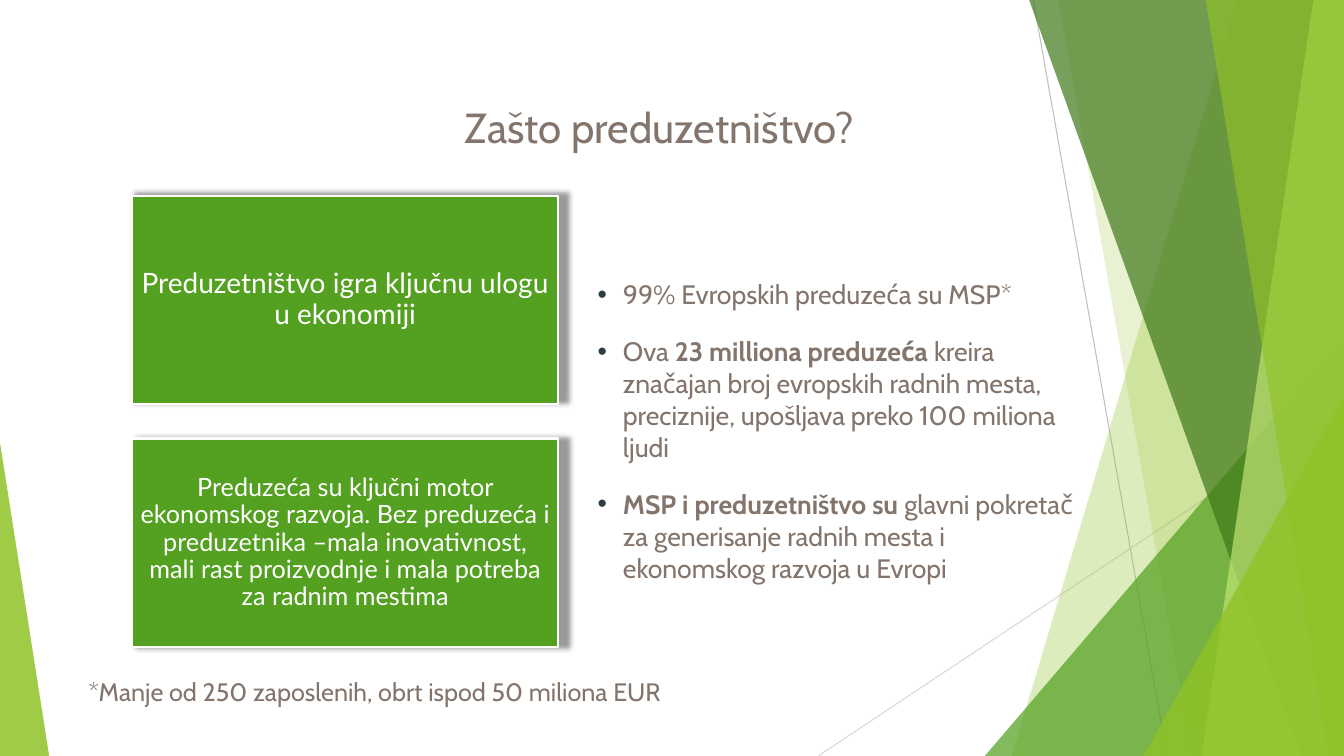
"""Build the slide on why enterprise matters."""
from dataclasses import dataclass
from typing import Any, NamedTuple

from lxml.etree import SubElement
from pptx import Presentation
from pptx.dml.color import RGBColor
from pptx.enum.shapes import MSO_CONNECTOR, MSO_SHAPE
from pptx.enum.text import MSO_ANCHOR, PP_ALIGN
from pptx.oxml.ns import qn
from pptx.util import Cm, Pt

WHITE = RGBColor(0xFF, 0xFF, 0xFF)
BLACK = RGBColor(0x00, 0x00, 0x00)
LIME = RGBColor(0x90, 0xC2, 0x26)
GREEN = RGBColor(0x54, 0xA0, 0x21)
FOREST = RGBColor(0x3F, 0x78, 0x19)
PALE = RGBColor(0xC0, 0xE4, 0x74)
BROWN = RGBColor(0x84, 0x75, 0x6C)
SLATE = RGBColor(0x2C, 0x3C, 0x43)
GREY = RGBColor(0xBF, 0xBF, 0xBF)
MIST = RGBColor(0xD9, 0xD9, 0xD9)

WIDE, HIGH = 33.87, 19.05
BLEED = -0.02


class Box(NamedTuple):
    left: float
    top: float
    width: float
    height: float


@dataclass
class Ray:
    start: tuple[float, float]
    end: tuple[float, float]
    color: RGBColor


@dataclass
class Shard:
    """A panel that reaches the right edge, set by the ends of its left side."""
    top: float
    foot: float
    color: RGBColor
    alpha: int


@dataclass
class Wedge:
    box: Box
    apex: float
    color: RGBColor
    alpha: int


@dataclass
class Card:
    top: float
    text: str
    size: int
    inset: float
    angle: int


@dataclass
class Note:
    box: Box
    lines: list[list[tuple[str, bool]]]
    size: int
    format: dict[str, Any]
    bullet: bool = False


RAYS = [
    Ray((26.04, 0), (29.41, HIGH), GREY),
    Ray((WIDE, 10.24), (20.62, HIGH), MIST),
]
PANELS = [
    Shard(31.19, 25.5, LIME, 30),
    Shard(26.67, 30.05, LIME, 20),
    Wedge(Box(24.82, 8.46, 9.05, 10.59), 1, GREEN, 72),
    Shard(25.93, 32.79, FOREST, 70),
    Shard(33.1, 30.28, PALE, 70),
    Shard(30.38, 33.48, LIME, 65),
    Wedge(Box(28.82, 9.98, 5.05, 9.07), 1, LIME, 80),
    Wedge(Box(0, 11.15, 1.24, 7.9), 0, LIME, 85),
]
CARDS = [
    Card(4.93, "Preduzetništvo igra ključnu ulogu u ekonomiji", 20, 0.2, 315),
    Card(11.05, "Preduzeća su ključni motor ekonomskog razvoja. Bez preduzeća i "
         "preduzetnika –mala inovativnost, mali rast proizvodnje i mala potreba "
         "za radnim mestima", 18, 0.18, 0),
]
NOTES = [
    Note(Box(1.68, 2.44, 29.87, 2.18), [[("Zašto preduzetništvo?", False)]], 30,
         {"alignment": PP_ALIGN.CENTER}),
    Note(Box(14.81, 6.88, 12.73, 11.38), [
        [("99% Evropskih preduzeća su MSP*", False)],
        [("Ova ", False), ("23 milliona preduzeća ", True),
         ("kreira značajan broj evropskih radnih mesta, preciznije, "
          "upošljava preko 100 miliona ljudi", False)],
        [("MSP i preduzetništvo su ", True),
         ("glavni pokretač za generisanje radnih mesta i ekonomskog "
          "razvoja u Evropi", False)],
    ], 19, {"space_after": Pt(18)}, True),
    Note(Box(1.98, 16.92, 22.96, 1.02),
         [[("*Manje od 250 zaposlenih, obrt ispod 50 miliona EUR", False)]], 18, {}),
]


def apply(target: Any, format: dict[str, Any]) -> None:
    """Set each named value on the target."""
    for name, value in format.items():
        setattr(target, name, value)


def place(box: Box) -> list[Cm]:
    """Turn a box into lengths."""
    return [Cm(side) for side in box]


def write(para: Any, text: str, color: RGBColor, format: dict[str, Any]) -> None:
    """Add one run of text."""
    run = para.add_run()
    run.text = text
    apply(run.font, format)
    run.font.color.rgb = color


def draw_ray(shapes: Any, ray: Ray) -> None:
    """Draw a thin line."""
    ends = [Cm(value) for value in ray.start + ray.end]
    line = shapes.add_connector(MSO_CONNECTOR.STRAIGHT, *ends)
    line.line.color.rgb = ray.color
    line.line.width = Pt(0.75)
    SubElement(line._element.spPr, qn("a:effectLst"))


def draw_panel(shapes: Any, panel: Shard | Wedge) -> None:
    """Draw a clear panel of the backdrop."""
    if isinstance(panel, Shard):
        build = shapes.build_freeform(Cm(panel.top), Cm(BLEED))
        build.add_line_segments([(Cm(WIDE), Cm(BLEED)), (Cm(WIDE), Cm(HIGH)),
                                 (Cm(panel.foot), Cm(HIGH))])
        shape = build.convert_to_shape()
    else:
        shape = shapes.add_shape(MSO_SHAPE.ISOSCELES_TRIANGLE, *place(panel.box))
        shape.adjustments[0] = panel.apex
    shape.shadow.inherit = False
    shape.line.fill.background()
    shape.fill.solid()
    shape.fill.fore_color.rgb = panel.color
    tint = shape._element.spPr.find(qn("a:solidFill"))[0]
    SubElement(tint, qn("a:alpha"), val=str(panel.alpha * 1000))


def draw_card(shapes: Any, card: Card) -> None:
    """Draw a green card with its shadow and text."""
    shape = shapes.add_shape(MSO_SHAPE.RECTANGLE, *place(Box(3.33, card.top, 10.74, 5.26)))
    shape.shadow.inherit = False
    shape.fill.solid()
    shape.fill.fore_color.rgb = GREEN
    shape.line.color.rgb = WHITE
    shape.line.width = Pt(1.5)
    glow = SubElement(shape._element.spPr.find(qn("a:effectLst")), qn("a:outerShdw"),
                      blurRad=str(Pt(4)), dist=str(Pt(3)), dir=str(card.angle * 60000),
                      sx="101500", algn="l", rotWithShape="0")
    tint = SubElement(glow, qn("a:srgbClr"), val=str(BLACK))
    SubElement(tint, qn("a:alpha"), val="40000")
    frame = shape.text_frame
    apply(frame, {"word_wrap": True, "vertical_anchor": MSO_ANCHOR.MIDDLE})
    sides = ("left", "top", "right", "bottom")
    apply(frame, {f"margin_{side}": Cm(card.inset) for side in sides})
    para = frame.paragraphs[0]
    apply(para, {"alignment": PP_ALIGN.CENTER, "line_spacing": 0.9})
    write(para, card.text, WHITE, {"name": "Lato", "size": Pt(card.size)})


def draw_note(shapes: Any, note: Note) -> None:
    """Draw a text box, with bullets if asked."""
    frame = shapes.add_textbox(*place(note.box)).text_frame
    frame.word_wrap = True
    for index, line in enumerate(note.lines):
        para = frame.add_paragraph() if index else frame.paragraphs[0]
        if note.bullet:
            props = para._p.get_or_add_pPr()
            props.set("marL", str(Cm(0.64)))
            props.set("indent", str(Cm(-0.64)))
            SubElement(SubElement(props, qn("a:buClr")), qn("a:srgbClr"), val=str(SLATE))
            SubElement(props, qn("a:buFont"), typeface="Arial")
            SubElement(props, qn("a:buChar"), char="•")
        apply(para, note.format)
        for text, bold in line:
            write(para, text, BROWN, {"name": "Cabin", "size": Pt(note.size), "bold": bold})


def main() -> None:
    """Build and save the slide."""
    deck = Presentation()
    apply(deck, {"slide_width": Cm(WIDE), "slide_height": Cm(HIGH)})
    shapes = deck.slides.add_slide(deck.slide_layouts[6]).shapes
    for draw, parts in ((draw_ray, RAYS), (draw_panel, PANELS),
                        (draw_card, CARDS), (draw_note, NOTES)):
        for part in parts:
            draw(shapes, part)
    deck.save("out.pptx")


if __name__ == "__main__":
    main()
